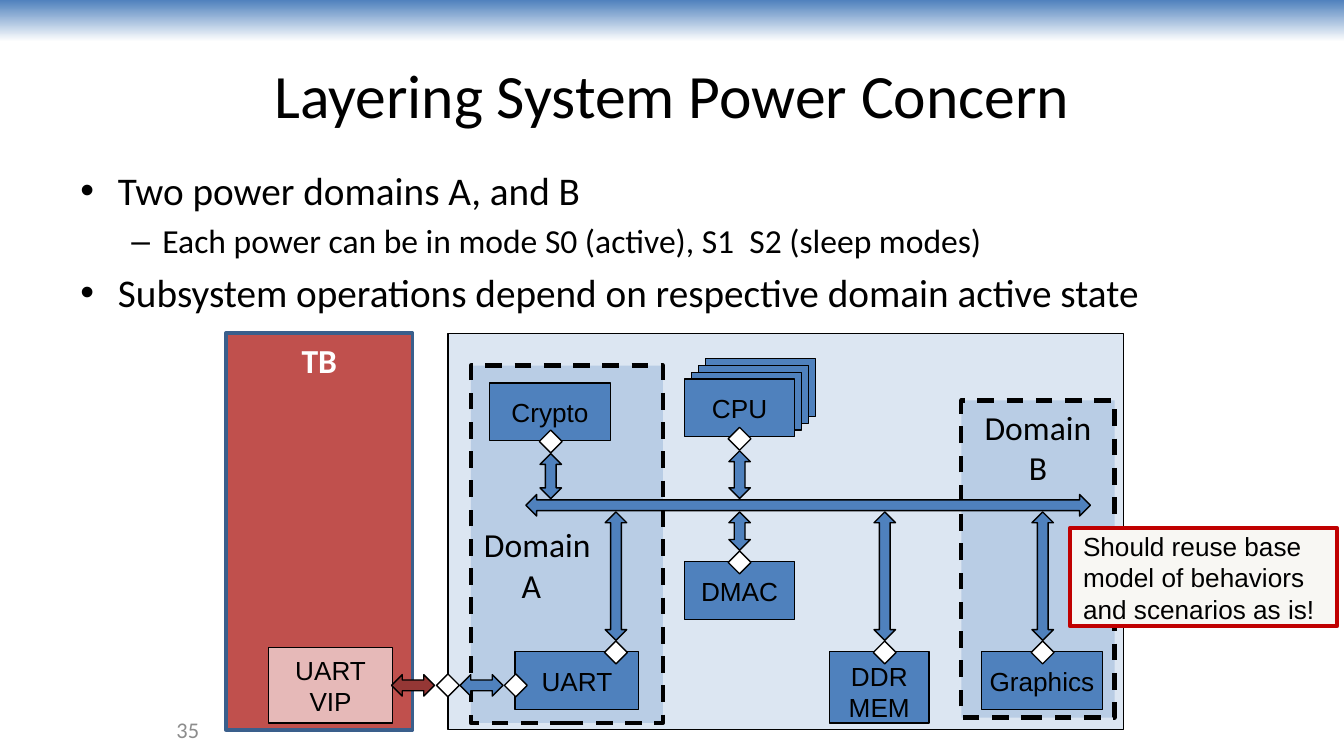
from collections import namedtuple

from pptx import Presentation
from pptx.dml.color import RGBColor
from pptx.enum.dml import MSO_LINE
from pptx.enum.shapes import MSO_SHAPE
from pptx.enum.text import MSO_ANCHOR, PP_ALIGN
from pptx.oxml.ns import qn
from pptx.util import Inches, Pt
from lxml.etree import SubElement

COLS, ROWS = 100, 56.25
CELL = Inches(0.1)
COLORS = {
    "black": "000000", "white": "FFFFFF", "grey": "8C8C8C",
    "blue": "4F81BD", "chip": "DCE6F2", "domain": "B9CDE5",
    "red": "C0504D", "navy": "3A5F8C", "pink": "E6B9B8", "dark_red": "953735",
    "note": "F8F7F3", "note_line": "C00000",
}
PIN = 1.7
ARROW = 1.6

Box = namedtuple("Box", "x y w h")


def inside(box, x, y, w, h):
    return Box(box.x + x, box.y + y, w, h)


def place(box):
    return [round(v * CELL) for v in box]


def rgb(name):
    return RGBColor.from_string(COLORS[name])


def write(sp, text, size, font="Calibri", color="black", bold=False,
          align=PP_ALIGN.CENTER, anchor=MSO_ANCHOR.MIDDLE, wrap=True):
    tf = sp.text_frame
    tf.word_wrap = wrap
    tf.vertical_anchor = anchor
    tf.text = text
    for p in tf.paragraphs:
        p.alignment = align
        for r in p.runs:
            r.font.size, r.font.name, r.font.bold = Pt(size), font, bold
            r.font.color.rgb = rgb(color)
    return tf


def set_indent(p, left, first):
    pPr = p._p.get_or_add_pPr()
    pPr.set("marL", str(Inches(left)))
    pPr.set("indent", str(Inches(first)))
    return pPr


def add_shape(s, box, fill, kind=MSO_SHAPE.RECTANGLE, line="black", width=0.75):
    sp = s.shapes.add_shape(kind, *place(box))
    sp.shadow.inherit = False
    sp.fill.solid()
    sp.fill.fore_color.rgb = rgb(fill)
    sp.line.color.rgb = rgb(line)
    sp.line.width = Pt(width)
    return sp


def add_block(s, box, label, fill="blue"):
    return write(add_shape(s, box, fill), label, 14, "Arial", wrap=False)


def add_domain(s, box):
    sp = add_shape(s, box, "domain", width=2.25)
    sp.line.dash_style = MSO_LINE.DASH
    return sp


def add_pin(s, box, x, y):
    """Diamond port centred on a point of the box."""
    add_shape(s, inside(box, x - PIN / 2, y - PIN / 2, PIN, PIN), "white", MSO_SHAPE.DIAMOND)


def add_arrow(s, box, x, y, length, fill="blue", vertical=False):
    """Double arrow centred on a point of the box."""
    area = inside(box, x - length / 2, y - ARROW / 2, length, ARROW)
    sp = add_shape(s, area, fill, MSO_SHAPE.LEFT_RIGHT_ARROW)
    sp.rotation = 90 if vertical else 0


def add_banner(s, box):
    sp = add_shape(s, box, "blue")
    sp.line.fill.background()
    sp.fill.gradient()
    sp.fill.gradient_angle = 270
    for stop, color in zip(sp.fill.gradient_stops, ("blue", "white")):
        stop.color.rgb = rgb(color)


def add_text(s, box, text, size, **style):
    return write(s.shapes.add_textbox(*place(box)), text, size, **style)


def add_bullets(s, box, items):
    levels = [("•", 0.28, -0.28, 21), ("–", 0.61, -0.23, 18)]
    tf = add_text(s, box, "\n".join(text for _, text in items), 21,
                  align=PP_ALIGN.LEFT, anchor=MSO_ANCHOR.TOP)
    for i, (p, (level, _)) in enumerate(zip(tf.paragraphs, items)):
        char, left, first, size = levels[level]
        p.level = level
        pPr = set_indent(p, left, first)
        SubElement(pPr, qn("a:buFont"), typeface="Arial")
        SubElement(pPr, qn("a:buChar"), char=char)
        if i:
            p.space_before = Pt(size * 0.2)
        p.runs[0].font.size = Pt(size)


def add_testbench(s, box):
    sp = add_shape(s, box, "red", line="navy", width=2)
    write(sp, "TB", 18, color="white", bold=True, anchor=MSO_ANCHOR.TOP)
    add_block(s, inside(box, 3.2, 23.4, 9.2, 5.6), "UART\nVIP", "pink")


def add_domains(s, box):
    sp = add_domain(s, inside(box, 1.7, 2.4, 14.3, 26.6))
    tf = write(sp, "Domain\vA", 18, align=PP_ALIGN.LEFT)
    tf.margin_top = Inches(0.35)
    set_indent(tf.paragraphs[0], 0.28, -0.28)
    sp = add_domain(s, inside(box, 38.2, 5, 11.4, 23.6))
    write(sp, "Domain B", 18, anchor=MSO_ANCHOR.TOP)


def add_chip(s, box):
    add_shape(s, box, "chip")
    add_domains(s, box)

    for i in (3, 2, 1):
        add_shape(s, inside(box, 17.6 + 0.52 * i, 3.4 - 0.5 * i, 8.2, 4.3), "blue")
    for label, x, y, w in [("CPU", 17.6, 3.4, 8.2), ("Crypto", 3.1, 3.7, 9),
                           ("DMAC", 17.6, 17, 8.2), ("UART", 5, 23.7, 9.2),
                           ("Graphics", 39.7, 23.7, 9)]:
        add_block(s, inside(box, x, y, w, 4.3), label)
    tf = add_block(s, inside(box, 28.4, 23.7, 7.4, 5.3), "DDR\vMEM")
    tf.vertical_anchor = MSO_ANCHOR.BOTTOM
    tf.margin_bottom = 0

    bus_y = 12.8
    add_arrow(s, box, 26.8, bus_y, 42)
    for x, y in [(7.65, 8.05), (21.7, 7.85), (21.7, 17.05),
                 (12.5, 23.75), (32.5, 23.75), (44.25, 23.75)]:
        side = 1 if y > bus_y else -1
        start, end = bus_y + side * 0.5, y - side * 0.9
        add_arrow(s, box, x, (start + end) / 2, abs(end - start), vertical=True)
        add_pin(s, box, x, y)

    port_y = 26.2
    add_arrow(s, box, -2.6, port_y, 3.2, "dark_red")
    add_arrow(s, box, 2.5, port_y, 3.2)
    for x in (0, 5.05):
        add_pin(s, box, x, port_y)


def add_callout(s, box, text):
    sp = add_shape(s, box, "note", MSO_SHAPE.LINE_CALLOUT_1, "note_line", 2)
    for i, value in enumerate((0.41, 0, 0.41, 0)):
        sp.adjustments[i] = value
    write(sp, text, 14, "Arial", align=PP_ALIGN.LEFT)


def main():
    prs = Presentation()
    prs.slide_width, prs.slide_height = COLS * CELL, round(ROWS * CELL)
    s = prs.slides.add_slide(prs.slide_layouts[6])

    add_banner(s, Box(0, 0, COLS, 3.1))
    add_text(s, Box(5, 2.25, 90, 9.4), "Layering System Power Concern", 33)
    add_bullets(s, Box(5, 11.9, 90, 36.9), [
        (0, "Two power domains A, and B"),
        (1, "Each power can be in mode S0 (active), S1  S2 (sleep modes)"),
        (0, "Subsystem operations depend on respective domain active state"),
    ])
    add_text(s, Box(0, 52.8, 15.8, 3), "35", 12, color="grey", align=PP_ALIGN.RIGHT)
    add_testbench(s, Box(16.8, 24.8, 13.9, 29.5))
    add_chip(s, Box(33.33, 24.8, 50.25, 29.5))
    add_callout(s, Box(79.6, 39.3, 19.9, 7.3),
                "Should reuse base model of behaviors and scenarios as is!")
    prs.save("out.pptx")


if __name__ == "__main__":
    main()
